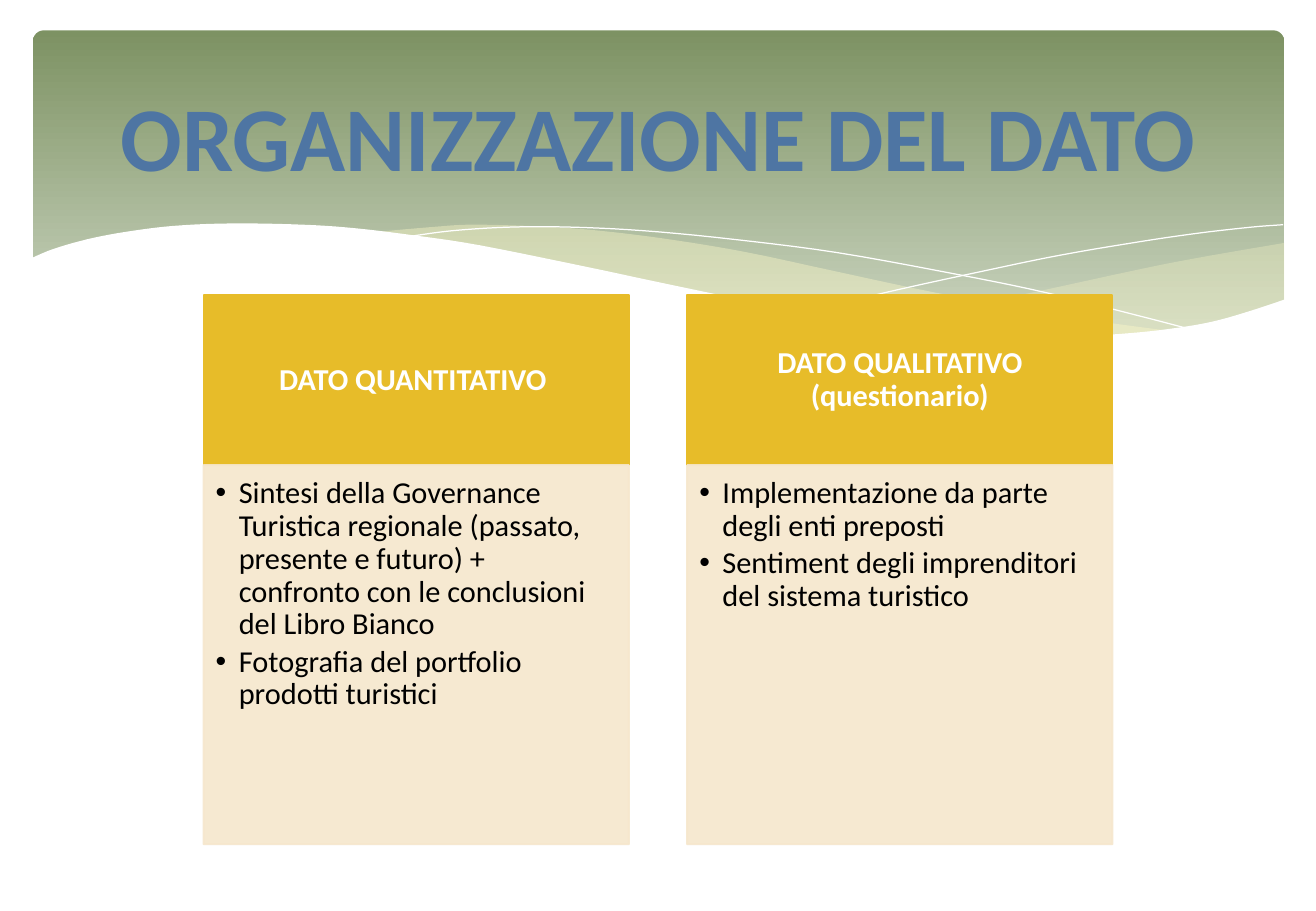
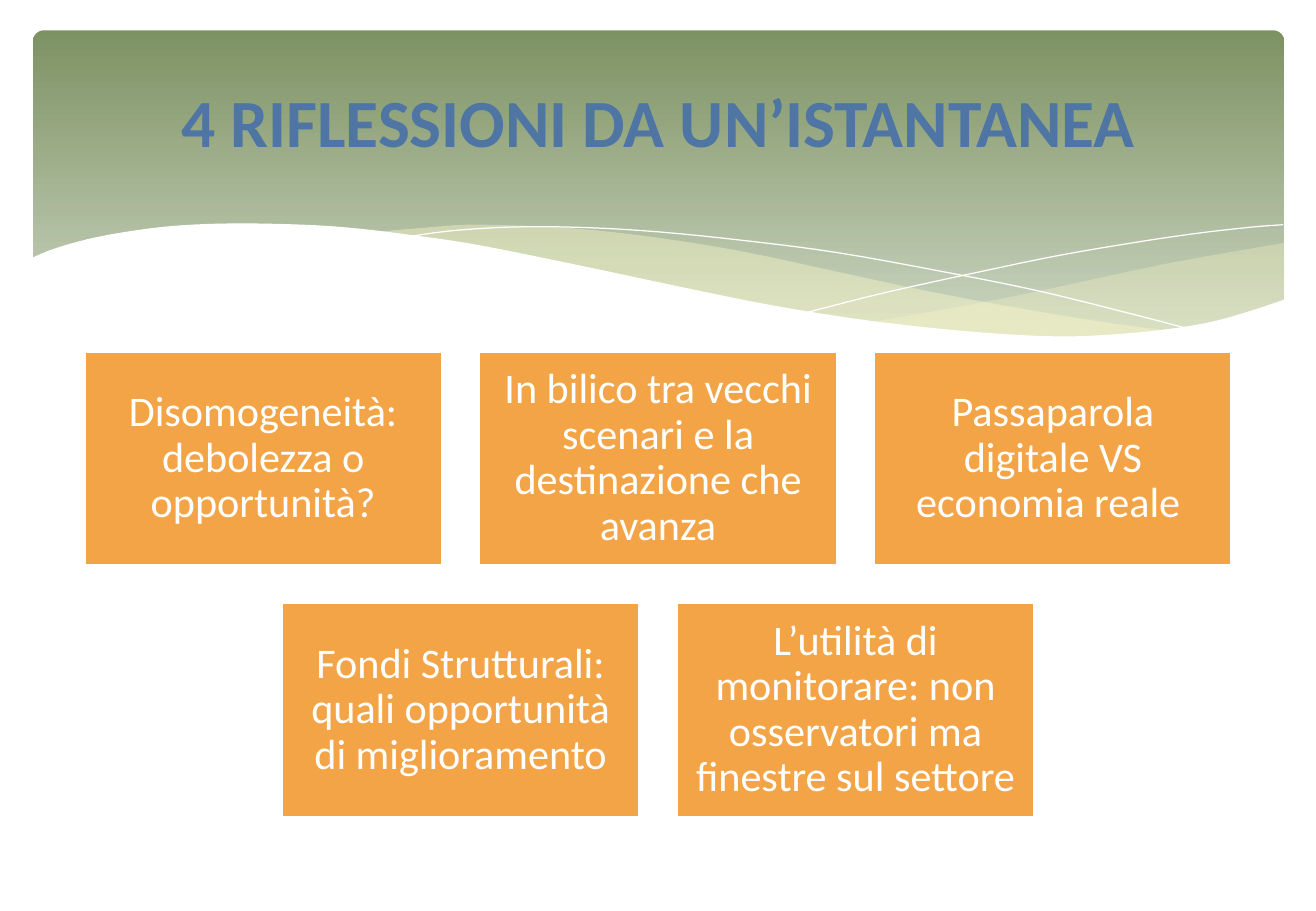
from lxml.etree import SubElement
from pptx import Presentation
from pptx.dml.color import RGBColor
from pptx.enum.shapes import MSO_SHAPE as Preset
from pptx.enum.text import MSO_ANCHOR as Anchor, MSO_AUTO_SIZE as AutoSize, PP_ALIGN as Align
from pptx.oxml.ns import qn
from pptx.util import Inches, Pt

# Content
COMPARISON = {
    "title": "ORGANIZZAZIONE DEL DATO",
    "columns": [
        ("DATO QUANTITATIVO ", [
            "Sintesi della Governance Turistica regionale (passato, presente e futuro) + "
            "confronto con le conclusioni del Libro Bianco",
            "Fotografia del portfolio prodotti turistici"]),
        ("DATO QUALITATIVO (questionario)", [
            "Implementazione da parte degli enti preposti",
            "Sentiment degli imprenditori del sistema turistico"]),
    ],
}
REFLECTIONS = {
    "title": "4 RIFLESSIONI DA UN’ISTANTANEA",
    "rows": [
        ["Disomogeneità: debolezza o opportunità?",
         "In bilico tra vecchi scenari e la destinazione che avanza",
         "Passaparola digitale VS economia reale "],
        ["Fondi Strutturali: quali opportunità di miglioramento",
         "L’utilità di monitorare: non osservatori ma finestre sul settore"],
    ],
}

# Shared look
WIDTH, HEIGHT = 10.83, 7.5
FONT = "Calibri"
WHITE, BLACK, BLUE, OUTLINE = "FFFFFF", "000000", "4E75A3", "FDFDFD"
GREEN, PALE_GREEN, CREAM = "7D9263", "C9D3BE", "FEFAC9"
GOLD, SAND, ORANGE = "E7BC29", "F6E7CD", "F3A447"

# Waves: each is a list of curves, joined by straight edges
RIGHT_WAVE = [
    [(10.57, 2), (9.82, 2.13), (9.32, 2.23), (8.44, 2.42), (7.65, 2.57), (7.16, 2.65)],
    [(7.16, 2.65), (7.78, 2.72), (8.33, 2.77), (8.82, 2.78), (9.35, 2.75), (9.81, 2.69),
     (10.21, 2.59), (10.57, 2.47)],
]
LONG_WAVE = [
    [(9.67, 2.73), (9.07, 2.65), (8.4, 2.54), (7.65, 2.4), (6.81, 2.22), (6.16, 2.08),
     (5.57, 1.98), (5.03, 1.91), (4.55, 1.87), (3.91, 1.85), (3.55, 1.87), (3.1, 1.91)],
    [(3.1, 1.91), (3.71, 1.99), (4.38, 2.11), (4.87, 2.22), (5.74, 2.4), (6.51, 2.55),
     (7.21, 2.66), (7.83, 2.74), (8.37, 2.77), (8.86, 2.78), (9.29, 2.77), (9.67, 2.73)],
]
FALLING_LINE = [
    [(3.35, 1.95), (3.72, 1.9), (4.2, 1.87), (4.69, 1.87), (5.3, 1.9), (6.03, 1.97),
     (6.89, 2.08), (7.88, 2.26), (8.61, 2.41), (9.41, 2.61), (9.83, 2.72)],
]
RISING_LINE = [
    [(6.65, 2.57), (7.28, 2.41), (8.1, 2.23), (8.73, 2.1), (9.38, 1.99), (9.86, 1.92),
     (10.3, 1.87), (10.56, 1.85)],
]
WHITE_WAVE = [
    [(10.59, 2.46), (10.29, 2.56), (9.97, 2.65), (9.61, 2.71), (9.21, 2.75), (8.76, 2.77),
     (8.25, 2.75), (7.67, 2.7), (7.01, 2.62), (6.28, 2.5), (5.45, 2.33), (4.84, 2.2),
     (3.95, 2.02), (3.42, 1.94), (2.93, 1.88), (2.49, 1.85), (1.91, 1.84), (1.43, 1.86),
     (1.03, 1.91), (0.72, 1.97), (0.44, 2.05), (0.25, 2.13)],
    [(0.25, 3.29), (10.59, 3.29)],
]


def rgb(value):
    return RGBColor.from_string(value)


def paint(shape, fill=None, line=None, line_width=0, alpha=100):
    """Set fill, line and opacity, without a shadow."""
    shape.shadow.inherit = False
    if fill:
        shape.fill.solid()
        shape.fill.fore_color.rgb = rgb(fill)
    else:
        shape.fill.background()
    if line:
        shape.line.color.rgb = rgb(line)
        shape.line.width = Pt(line_width)
    else:
        shape.line.fill.background()
    if alpha < 100:
        for color in shape.element.spPr.iter(qn("a:srgbClr")):
            SubElement(color, qn("a:alpha"), val=str(alpha * 1000))


def place(shape, left, top, width, height):
    shape.left, shape.top = Inches(left), Inches(top)
    shape.width, shape.height = Inches(width), Inches(height)


def write(shape, texts, size, color=WHITE, bold=False, align=Align.CENTER, anchor=Anchor.MIDDLE,
          insets=(0.1, 0.1, 0.1, 0.1), spacing=0.9, after=0, bullet=False, wrap=True, outline=None):
    """Write one paragraph for each text."""
    frame = shape.text_frame
    frame.word_wrap, frame.auto_size, frame.vertical_anchor = wrap, AutoSize.NONE, anchor
    (frame.margin_left, frame.margin_top,
     frame.margin_right, frame.margin_bottom) = map(Inches, insets)
    for number, text in enumerate(texts):
        paragraph = frame.add_paragraph() if number else frame.paragraphs[0]
        paragraph.alignment, paragraph.line_spacing = align, spacing
        paragraph.space_before, paragraph.space_after = Pt(0), Pt(after)
        properties = paragraph._p.get_or_add_pPr()
        indent = Inches(0.19) if bullet else 0
        properties.set("marL", str(indent))
        properties.set("indent", str(-indent))
        if bullet:
            SubElement(properties, qn("a:buFont"), typeface="Arial")
            SubElement(properties, qn("a:buChar"), char="•")
        else:
            SubElement(properties, qn("a:buNone"))
        run = paragraph.add_run()
        run.text = text
        run.font.name, run.font.size, run.font.bold = FONT, Pt(size), bold
        run.font.color.rgb = rgb(color)
        if outline:
            border = SubElement(run._r.get_or_add_rPr(), qn("a:ln"), w=str(Pt(1.4)))
            SubElement(SubElement(border, qn("a:solidFill")), qn("a:srgbClr"), val=outline)
            run._r.rPr.insert(0, border)


def smooth(points, steps=5):
    """Run a Catmull-Rom curve through the points."""
    padded = [points[0], *points, points[-1]]
    curve = [points[0]]
    for a, b, c, d in zip(padded, padded[1:], padded[2:], padded[3:]):
        for step in range(1, steps + 1):
            t = step / steps
            curve.append(tuple(
                (2 * q + (r - p) * t + (2 * p - 5 * q + 4 * r - s) * t ** 2
                 + (3 * q - p - 3 * r + s) * t ** 3) / 2
                for p, q, r, s in zip(a, b, c, d)))
    return curve


def add_wave(slide, curves, closed=True, **look):
    points = [(Inches(x), Inches(y)) for curve in curves for x, y in smooth(curve)]
    builder = slide.shapes.build_freeform(*points[0])
    builder.add_line_segments(points[1:], close=closed)
    wave = builder.convert_to_shape()
    paint(wave, **look)
    return wave


def add_master_band(slide, master):
    """Draw the green band with its waves and move it to the master."""
    band = slide.shapes.add_shape(Preset.ROUNDED_RECTANGLE, 0, 0, 0, 0)
    place(band, 0.27, 0.25, WIDTH - 2 * 0.265, 2.7)
    band.adjustments[0] = 0.034
    paint(band)
    band.fill.gradient()
    band.fill.gradient_angle = 270
    for stop, color, position in zip(band.fill.gradient_stops, (GREEN, PALE_GREEN), (0, 0.9)):
        stop.color.rgb, stop.position = rgb(color), position
    parts = [
        band,
        add_wave(slide, RIGHT_WAVE, fill=CREAM, alpha=29),
        add_wave(slide, LONG_WAVE, fill=CREAM, alpha=40),
        add_wave(slide, FALLING_LINE, closed=False, line=WHITE),
        add_wave(slide, RISING_LINE, closed=False, line=WHITE),
        add_wave(slide, WHITE_WAVE, fill=WHITE),
    ]
    for number, part in enumerate(parts):
        part.element.nvSpPr.cNvPr.id = 100 + number
        master.shapes.element.insert(2 + number, part.element)


def set_title(slide, text, size, width, height):
    place(slide.shapes.title, (WIDTH - width) / 2, 0.61, width, height)
    write(slide.shapes.title, [text], size, color=BLUE, bold=True, anchor=Anchor.TOP,
          insets=(0.1, 0.05, 0.1, 0.05), spacing=1, wrap=False, outline=OUTLINE)


def centred_row(count, width, gap):
    """Left edges of equal boxes centred on the slide."""
    start = (WIDTH - count * width - (count - 1) * gap) / 2
    return [start + index * (width + gap) for index in range(count)]


def build_comparison(slide):
    set_title(slide, COMPARISON["title"], 54, 9.14, 1.01)
    width, top, head_height, body_height = 3.5, 2.43, 1.4, 3.12
    columns = COMPARISON["columns"]
    holders = list(slide.placeholders)[1:]
    for index, (left, (heading, items)) in enumerate(
            zip(centred_row(len(columns), width, 0.48), columns)):
        head, body = holders[2 * index:2 * index + 2]
        place(head, left, top, width, head_height)
        paint(head, fill=GOLD, line=GOLD, line_width=1.25)
        write(head, [heading], 18, bold=True, insets=(0.14, 0.08, 0.14, 0.08))
        place(body, left, top + head_height, width, body_height)
        paint(body, fill=SAND, line=SAND, line_width=1.25, alpha=90)
        write(body, items, 18, color=BLACK, align=Align.LEFT, anchor=Anchor.TOP,
              insets=(0.1, 0.1, 0.14, 0.16), after=2.7, bullet=True)


def build_reflections(slide):
    set_title(slide, REFLECTIONS["title"], 40, 8.13, 0.77)
    width, height, gap, top = 2.95, 1.77, 0.3, 2.89
    for row, texts in enumerate(REFLECTIONS["rows"]):
        for left, text in zip(centred_row(len(texts), width, gap), texts):
            box = slide.shapes.add_shape(Preset.RECTANGLE, 0, 0, 0, 0)
            place(box, left, top + row * (height + gap), width, height)
            paint(box, fill=ORANGE, line=WHITE, line_width=2)
            write(box, [text], 25)


def main():
    presentation = Presentation()
    presentation.slide_width, presentation.slide_height = Inches(WIDTH), Inches(HEIGHT)
    layouts = presentation.slide_layouts
    comparison = presentation.slides.add_slide(layouts.get_by_name("Comparison"))
    reflections = presentation.slides.add_slide(layouts.get_by_name("Title Only"))
    add_master_band(comparison, presentation.slide_master)
    build_comparison(comparison)
    build_reflections(reflections)
    presentation.save("out.pptx")


if __name__ == "__main__":
    main()
